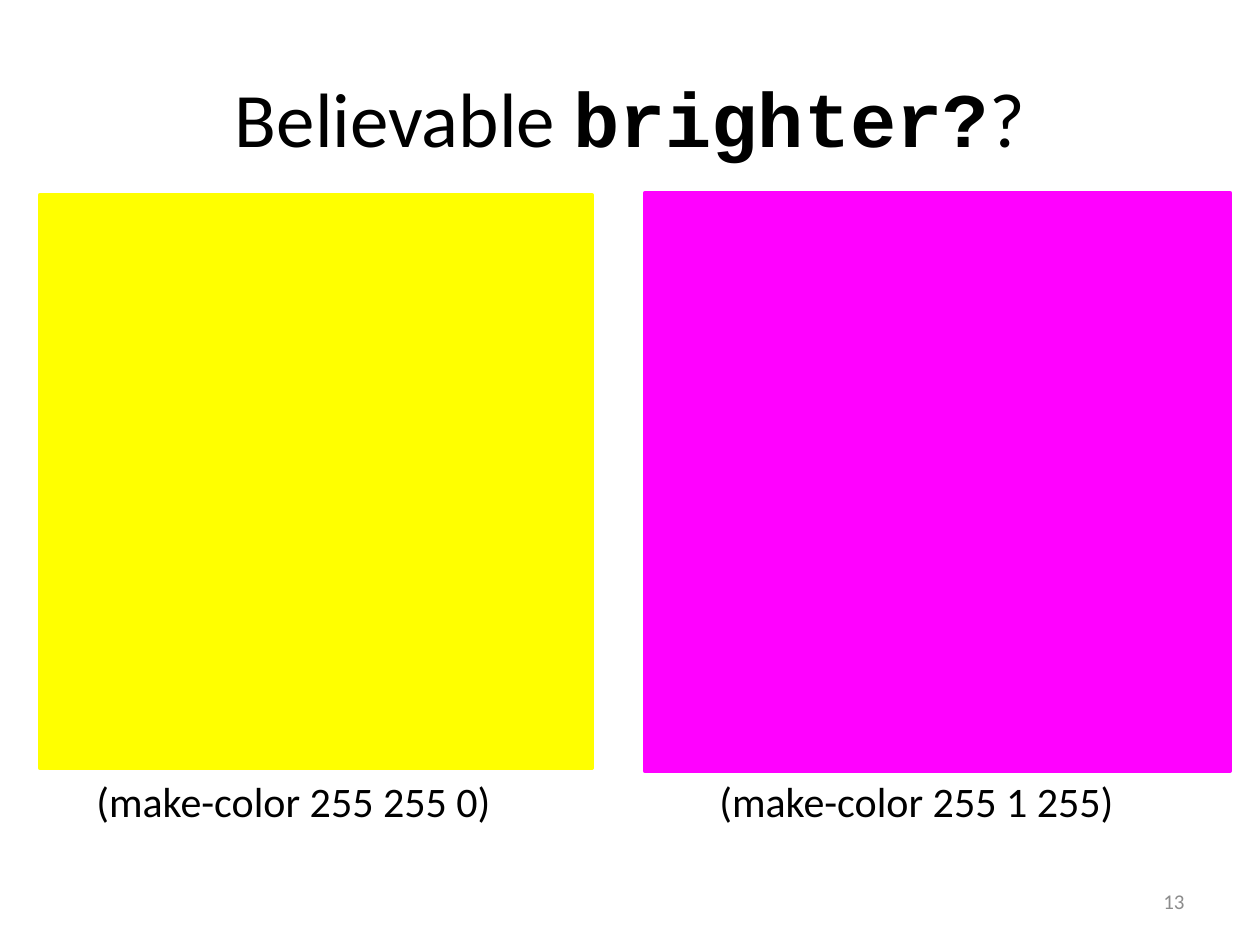
from pptx import Presentation
from pptx.dml.color import RGBColor
from pptx.enum.shapes import MSO_SHAPE
from pptx.enum.text import MSO_ANCHOR, PP_ALIGN
from pptx.util import Pt

RECT = MSO_SHAPE.RECTANGLE
TOP, MIDDLE = MSO_ANCHOR.TOP, MSO_ANCHOR.MIDDLE
LEFT, CENTER, RIGHT = PP_ALIGN.LEFT, PP_ALIGN.CENTER, PP_ALIGN.RIGHT
PX = 914400 // 126
COLORS = {"ink": "000000", "gray": "8C8C8C", "yellow": "FFFF00", "pink": "FF01FF"}


def scale(*box):
    return [n * PX for n in box]


def write(shape, text, size=24, color="ink", font="Calibri", bold=False,
          align=LEFT, anchor=TOP, wrap=True):
    frame = shape.text_frame
    frame.word_wrap = wrap
    frame.vertical_anchor = anchor
    para = frame.paragraphs[0]
    para.alignment = align
    run = para.add_run()
    run.text = text
    run.font.size = Pt(size)
    run.font.name = font
    run.font.bold = bold
    run.font.color.rgb = RGBColor.from_string(COLORS[color])


deck = Presentation()
deck.slide_width, deck.slide_height = scale(1260, 945)
slide = deck.slides.add_slide(deck.slide_layouts[5])
shapes = slide.shapes

title = shapes.title
title.left, title.top, title.width, title.height = scale(63, 38, 1134, 157)
for text, font, bold in [
    ("Believable ", "Calibri", False),
    ("brighter?", "Courier New", True),
    ("?", "Calibri", False),
]:
    write(title, text, size=44, font=font, bold=bold, align=CENTER, anchor=MIDDLE)

for color, box, left, text in [
    ("yellow", (40, 195, 552, 573), 84, "(make-color 255 255 0)"),
    ("pink", (645, 193, 585, 578), 707, "(make-color 255 1 255)"),
]:
    swatch = shapes.add_shape(RECT, *scale(*box))
    swatch.shadow.inherit = False
    swatch.fill.solid()
    swatch.fill.fore_color.rgb = RGBColor.from_string(COLORS[color])
    swatch.line.color.rgb = RGBColor.from_string(COLORS[color])
    swatch.line.width = Pt(2.5)
    label = shapes.add_textbox(*scale(left, 769, 464, 63))
    write(label, text, wrap=False)

number = shapes.add_textbox(*scale(903, 876, 294, 50))
write(number, "13", size=12, color="gray", align=RIGHT, anchor=MIDDLE)

deck.save("out.pptx")
